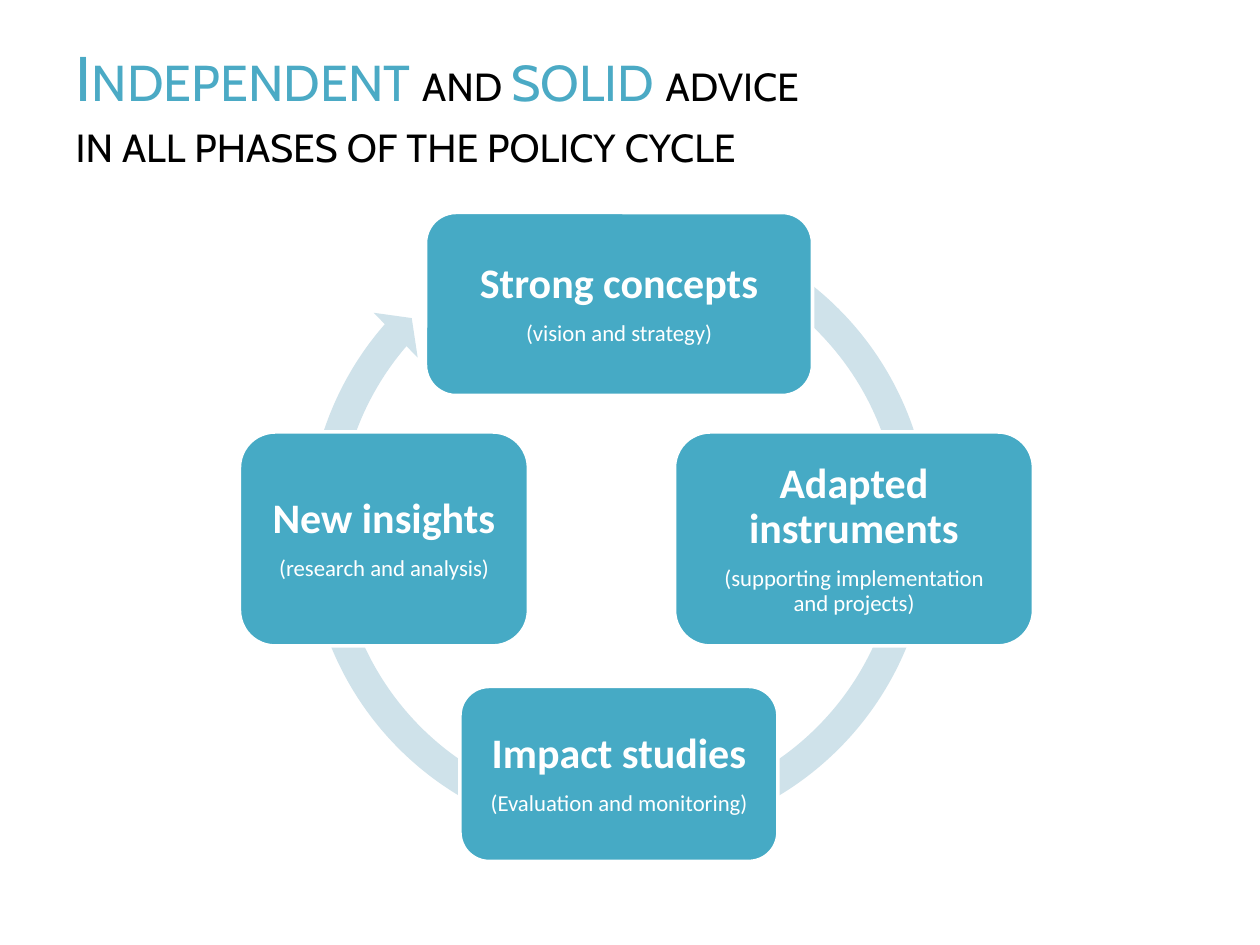
from math import cos, radians, sin

from pptx import Presentation
from pptx.dml.color import RGBColor
from pptx.enum.shapes import MSO_SHAPE as Shape
from pptx.enum.text import MSO_ANCHOR as Anchor, MSO_AUTO_SIZE as AutoSize, PP_ALIGN as Align
from pptx.util import Emu, Pt

EMU_PER_PX = 914400 / 126
TEAL, PALE, TITLE_BLUE = "46AAC5", "CFE2EA", "4BAAC5"
BLACK, WHITE = "000000", "FFFFFF"

TITLE_RUNS = [
    ("Independent ", 36, TITLE_BLUE),
    ("and ", 28, BLACK),
    ("solid ", 36, TITLE_BLUE),
    ("advice\nin all phases of the policy cycle", 28, BLACK),
]

# heading, detail, width, height; clockwise from the top
PHASES = [
    ("Strong concepts", "(vision and strategy)", 387, 183),
    ("Adapted instruments", "(supporting implementation\nand projects)", 359, 214),
    ("Impact studies", "(Evaluation and monitoring)", 318, 175),
    ("New insights", "(research and analysis)", 289, 214),
]


def px(length):
    return Emu(round(length * EMU_PER_PX))


def rgb(value):
    return RGBColor.from_string(value)


def add_text(para, text, font_name, size, color, bold=False, small_caps=False):
    """Add text to a paragraph, with a line break at each newline."""
    for number, line in enumerate(text.split("\n")):
        if number:
            para.add_line_break()
        span = para.add_run()
        span.text = line
        font = span.font
        font.name, font.size, font.bold = font_name, Pt(size), bold
        font.color.rgb = rgb(color)
        if small_caps:
            span._r.get_or_add_rPr().set("cap", "small")


def add_shape(page, kind, left, top, width, height, fill):
    shape = page.shapes.add_shape(kind, px(left), px(top), px(width), px(height))
    shape.shadow.inherit = False
    shape.fill.solid()
    shape.fill.fore_color.rgb = rgb(fill)
    return shape


def place_title(page, left, top, width, height):
    title = page.shapes.title
    title.left, title.top = px(left), px(top)
    title.width, title.height = px(width), px(height)
    frame = title.text_frame
    frame.auto_size = AutoSize.NONE
    frame.vertical_anchor = Anchor.MIDDLE
    para = frame.paragraphs[0]
    para.alignment = Align.LEFT
    for text, size, color in TITLE_RUNS:
        add_text(para, text, "Cabin", size, color, small_caps=True)


def add_phase(page, center_x, center_y, width, height, heading, detail):
    box = add_shape(page, Shape.ROUNDED_RECTANGLE,
                    center_x - width / 2, center_y - height / 2, width, height, TEAL)
    box.line.color.rgb = rgb(WHITE)
    box.line.width = Pt(2)
    frame = box.text_frame
    frame.word_wrap = True
    frame.vertical_anchor = Anchor.MIDDLE
    frame.margin_left = frame.margin_right = px(12)
    frame.margin_top = frame.margin_bottom = px(12)
    heading_para, detail_para = frame.paragraphs[0], frame.add_paragraph()
    for para in (heading_para, detail_para):
        para.alignment = Align.CENTER
        para.line_spacing = 0.9
    heading_para.space_after = Pt(8)
    add_text(heading_para, heading, "Calibri", 24, WHITE, bold=True)
    add_text(detail_para, detail, "Calibri", 13, WHITE)


def draw_cycle(page, left, top, size):
    """Draw the ring arrow in a square and the phases around its centre."""
    ring = add_shape(page, Shape.CIRCULAR_ARROW, left, top, size, size, PALE)
    ring.line.fill.background()
    for index, value in enumerate((0.047, 2.729, 132.574, 177.476, 0.048)):
        ring.adjustments[index] = value
    center_x, center_y = left + size / 2, top + size / 2 + 10
    radius = 235
    for index, (heading, detail, width, height) in enumerate(PHASES):
        angle = radians(index * 360 / len(PHASES) - 90)
        add_phase(page, center_x + radius * cos(angle), center_y + radius * sin(angle),
                  width, height, heading, detail)


def main():
    deck = Presentation()
    deck.slide_width, deck.slide_height = px(1260), px(945)
    page = deck.slides.add_slide(deck.slide_layouts[5])
    place_title(page, 63, 16, 1134, 179)
    draw_cycle(page, 292, 202, 654)
    deck.save("out.pptx")


if __name__ == "__main__":
    main()
